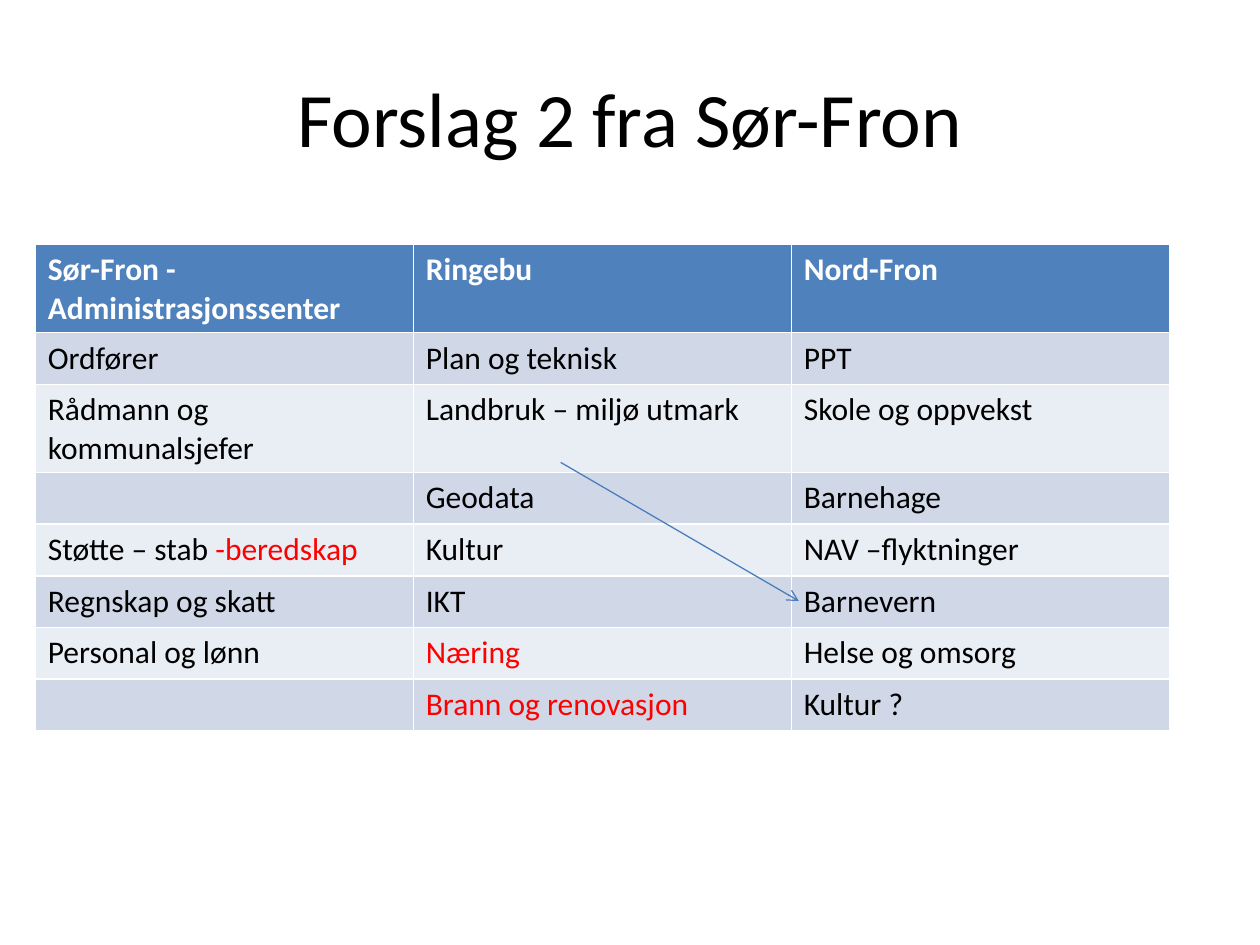
from lxml.etree import SubElement
from pptx import Presentation
from pptx.dml.color import RGBColor
from pptx.enum.shapes import MSO_CONNECTOR
from pptx.enum.text import MSO_ANCHOR, PP_ALIGN
from pptx.oxml.ns import qn
from pptx.util import Inches, Pt

WIDE, HIGH = 10, 7.5
FONT = "Calibri"
BLACK, WHITE, RED = "000000", "FFFFFF", "FF0000"
HEAD, BANDS = "4F81BD", ("D0D8E8", "E9EDF4")
ROWS = [
    ("Sør-Fron - Administrasjonssenter", "Ringebu", "Nord-Fron"),
    ("Ordfører", "Plan og teknisk", "PPT"),
    ("Rådmann og kommunalsjefer", "Landbruk – miljø utmark", "Skole og oppvekst"),
    ("", "Geodata", "Barnehage"),
    ("Støtte – stab |-beredskap", "Kultur", "NAV –flyktninger"),
    ("Regnskap og skatt", "IKT", "Barnevern"),
    ("Personal og lønn", "|Næring", "Helse og omsorg"),
    ("", "|Brann og renovasjon", "Kultur ?"),
]


def color(code):
    """Turn a hex string into a colour."""
    return RGBColor.from_string(code)


def style(run, size, code, bold=False):
    """Set the font of one run."""
    run.font.name, run.font.size, run.font.bold = FONT, Pt(size), bold
    run.font.color.rgb = color(code)


def add_title(slide, box, text):
    """Place the centred title in its box."""
    frame = slide.shapes.add_textbox(*map(Inches, box)).text_frame
    frame.word_wrap = True
    frame.vertical_anchor = MSO_ANCHOR.MIDDLE
    frame.text = text
    line = frame.paragraphs[0]
    line.alignment = PP_ALIGN.CENTER
    style(line.runs[0], 44, BLACK)


def fill_cell(cell, text, back, ink, bold):
    """Fill a cell, with the text after a bar in red."""
    cell.fill.solid()
    cell.fill.fore_color.rgb = color(back)
    for part, code in zip(text.split("|"), (ink, RED)):
        if part:
            run = cell.text_frame.paragraphs[0].add_run()
            run.text = part
            style(run, 18, code, bold)


def add_grid(slide, box, rows):
    """Place the table with a head row and banded rows."""
    size = len(rows), len(rows[0])
    table = slide.shapes.add_table(*size, *map(Inches, box)).table
    for r, row in enumerate(rows):
        top = r == 0
        back = HEAD if top else BANDS[(r - 1) % 2]
        for c, text in enumerate(row):
            fill_cell(table.cell(r, c), text, back, WHITE if top else BLACK, top)


def add_arrow(slide, box):
    """Draw an arrow from the top left to the bottom right of its box."""
    left, top, width, height = box
    ends = left, top, left + width, top + height
    arrow = slide.shapes.add_connector(MSO_CONNECTOR.STRAIGHT, *map(Inches, ends))
    arrow.line.width = Pt(0.75)
    arrow.line.color.rgb = color("4B7EBC")
    SubElement(arrow.line._get_or_add_ln(), qn("a:tailEnd"), type="arrow")
    SubElement(arrow._element.spPr, qn("a:effectLst"))


def main():
    """Build and save the slide."""
    deck = Presentation()
    deck.slide_width, deck.slide_height = Inches(WIDE), Inches(HIGH)
    slide = deck.slides.add_slide(deck.slide_layouts[6])
    wide = 0.9 * WIDE
    add_title(slide, (0.05 * WIDE, 0.04 * HIGH, wide, HIGH / 6), "Forslag 2 fra Sør-Fron")
    add_grid(slide, (0.28, 1.94, wide, 0.41 * len(ROWS)), ROWS)
    add_arrow(slide, (4.45, 3.67, 1.89, 1.1))
    deck.save("out.pptx")


if __name__ == "__main__":
    main()
